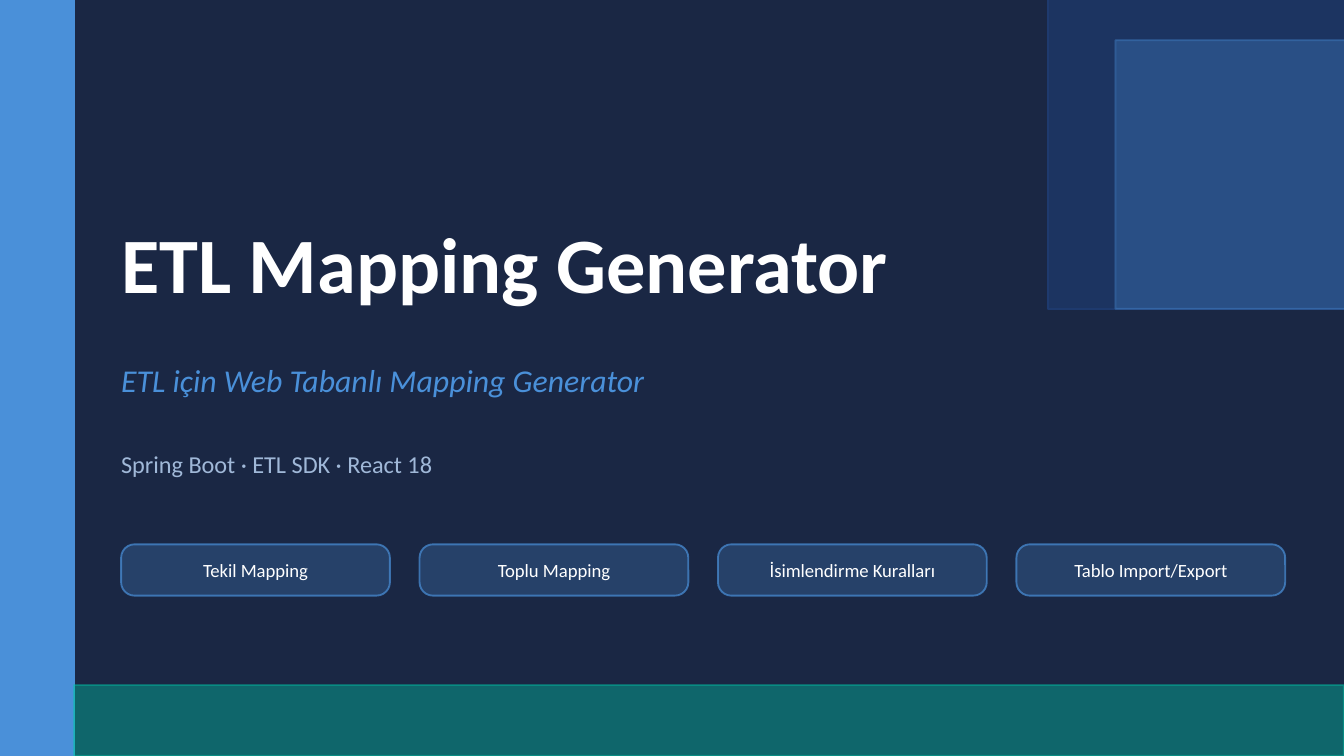
from dataclasses import dataclass

from lxml import etree
from pptx import Presentation
from pptx.dml.color import RGBColor
from pptx.enum import shapes, text
from pptx.oxml import ns
from pptx.util import Cm, Pt


@dataclass(frozen=True)
class Theme:
    font: str = "Calibri"
    navy: str = "1A2744"
    deep: str = "1E3A6E"
    blue: str = "4A90D9"
    teal: str = "00C6A7"
    pale: str = "A0B8D8"
    white: str = "FFFFFF"
    head: int = 42
    sub: int = 17
    note: int = 13
    label: int = 10


theme = Theme()


def write(shape, words, size, color, bold=False, italic=False, align=text.PP_ALIGN.LEFT):
    frame = shape.text_frame
    frame.text = words
    frame.word_wrap = True
    frame.auto_size = text.MSO_AUTO_SIZE.NONE
    frame.vertical_anchor = text.MSO_ANCHOR.MIDDLE
    frame.margin_left = frame.margin_right = frame.margin_top = frame.margin_bottom = 0
    para = frame.paragraphs[0]
    para.alignment = align
    para.space_before = Pt(0)
    font = para.runs[0].font
    font.name, font.size, font.bold, font.italic = theme.font, Pt(size), bold, italic
    font.color.rgb = RGBColor.from_string(color)


def block(kind, box, color, fill=100, line=100):
    shape = slide.shapes.add_shape(kind, *map(Cm, box))
    shape.shadow.inherit = False
    shape.fill.solid()
    shape.line.fill.solid()
    shape.line.width = Pt(1)
    for paint, alpha in ((shape.fill, fill), (shape.line.fill, line)):
        paint.fore_color.rgb = RGBColor.from_string(color)
        if alpha < 100:
            tone = paint.fore_color._xFill.find(ns.qn("a:srgbClr"))
            etree.SubElement(tone, ns.qn("a:alpha"), val=str(alpha * 1000))
    return shape


deck = Presentation()
deck.slide_width, deck.slide_height = Cm(25.4), Cm(14.29)
slide = deck.slides.add_slide(deck.slide_layouts[0])
slide.background.fill.solid()
slide.background.fill.fore_color.rgb = RGBColor.from_string(theme.navy)

rect = shapes.MSO_SHAPE.RECTANGLE
block(rect, (0, 0, 1.4, 14.29), theme.blue)
block(rect, (19.81, -0.51, 6.35, 6.35), theme.deep, fill=70)
block(rect, (21.08, 0.76, 5.08, 5.08), theme.blue, fill=30, line=30)
block(rect, (1.4, 12.95, 24, 1.34), theme.teal, fill=40, line=40)

left = 2.29
title, sub = slide.shapes.title, slide.placeholders[1]
note = slide.shapes.add_textbox(0, 0, 0, 0)
for shape, top, width, height in (
    (title, 3.56, 19.05, 2.79),
    (sub, 6.48, 19.81, 1.4),
    (note, 8.25, 19.05, 1.02),
):
    shape.left, shape.top = Cm(left), Cm(top)
    shape.width, shape.height = Cm(width), Cm(height)
write(title, "ETL Mapping Generator", theme.head, theme.white, bold=True)
write(sub, "ETL için Web Tabanlı Mapping Generator", theme.sub, theme.blue, italic=True)
write(note, "Spring Boot · ETL SDK · React 18", theme.note, theme.pale)

labels = ("Tekil Mapping", "Toplu Mapping", "İsimlendirme Kuralları", "Tablo Import/Export")
width, gap = 5.08, 0.56
for i, label in enumerate(labels):
    box = (left + i * (width + gap), 10.29, width, 0.97)
    pill = block(shapes.MSO_SHAPE.ROUNDED_RECTANGLE, box, theme.blue, fill=25, line=70)
    pill.adjustments[0] = 0.26
    write(pill, label, theme.label, theme.white, align=text.PP_ALIGN.CENTER)

deck.save("out.pptx")
